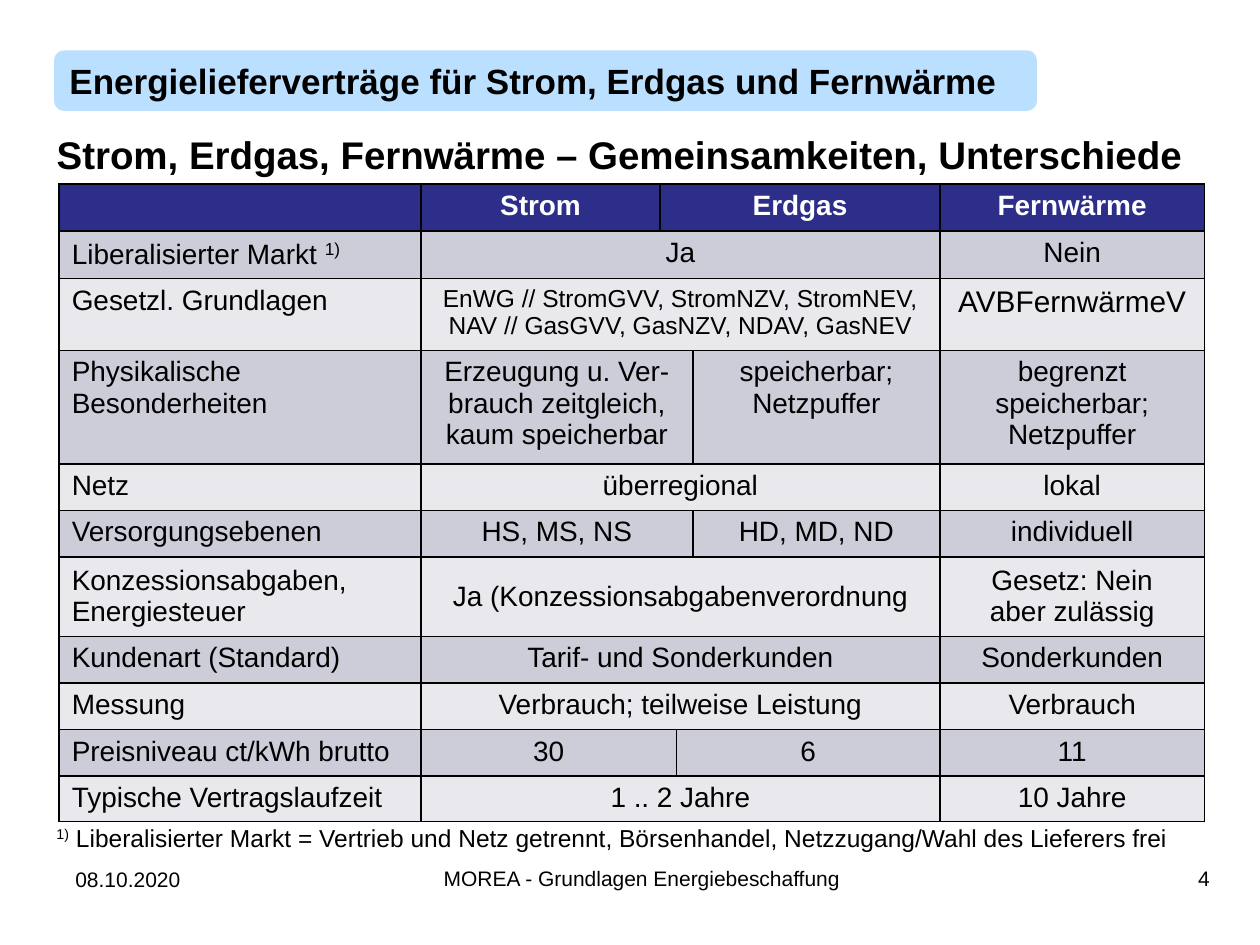
"""Build a slide comparing electricity, gas and district heating supply contracts."""
from lxml import etree
from pptx import Presentation
from pptx.dml.color import RGBColor
from pptx.enum.shapes import MSO_SHAPE
from pptx.enum.text import MSO_ANCHOR, PP_ALIGN
from pptx.oxml import parse_xml
from pptx.oxml.ns import nsdecls, qn
from pptx.util import Inches, Pt

LEFT, CENTER, RIGHT = PP_ALIGN.LEFT, PP_ALIGN.CENTER, PP_ALIGN.RIGHT
TOP, MIDDLE = MSO_ANCHOR.TOP, MSO_ANCHOR.MIDDLE
ROUNDED = MSO_SHAPE.ROUNDED_RECTANGLE
BLACK = RGBColor(0x00, 0x00, 0x00)
WHITE = RGBColor(0xFF, 0xFF, 0xFF)
SKY = RGBColor(0x05, 0x8E, 0xFF)
NAVY = RGBColor(0x2D, 0x2D, 0x8A)
GREY = RGBColor(0xCD, 0xCD, 0xDA)
PALE = RGBColor(0xE8, 0xE8, 0xED)


def add_span(para, text, size, color=BLACK, bold=False, raised=False):
    span = para.add_run()
    span.text = text
    span.font.name = "Arial"
    span.font.size = Pt(size)
    span.font.bold = bold
    span.font.color.rgb = color
    if raised:
        span._r.get_or_add_rPr().set("baseline", "30000")


def add_text_box(page, left, top, width, height, align=LEFT):
    box = page.shapes.add_textbox(Inches(left), Inches(top), Inches(width), Inches(height))
    box.text_frame.word_wrap = True
    para = box.text_frame.paragraphs[0]
    para.alignment = align
    return para


deck = Presentation()
deck.slide_width, deck.slide_height = Inches(10), Inches(7.5)
page = deck.slides.add_slide(deck.slide_layouts[5])

banner = page.shapes.add_shape(ROUNDED, Inches(0.43), Inches(0.4), Inches(7.8), Inches(0.48))
banner.shadow.inherit = False
banner.fill.solid()
banner.fill.fore_color.rgb = SKY
banner_color = banner._element.spPr.find(qn("a:solidFill"))[0]
etree.SubElement(banner_color, qn("a:alpha")).set("val", "27000")
banner.line.fill.background()
banner.text_frame.vertical_anchor = MIDDLE
banner_para = banner.text_frame.paragraphs[0]
banner_para.alignment = LEFT
add_span(banner_para, "Energielieferverträge für Strom, Erdgas und Fernwärme", 20, bold=True)

title = page.shapes.title
title.left, title.top = Inches(0.35), Inches(0.99)
title.width, title.height = Inches(9.34), Inches(0.47)
title.text_frame.vertical_anchor = TOP
title.text_frame.word_wrap = True
title_para = title.text_frame.paragraphs[0]
title_para.alignment = LEFT
add_span(title_para, "Strom, Erdgas, Fernwärme – Gemeinsamkeiten, Unterschiede", 22, bold=True)

column_widths = [2.87, 1.9, 0.13, 0.13, 1.96, 2.1]
rows = [
    (0.36, [(0, 1, ""), (1, 1, "Strom"), (2, 3, "Erdgas"), (5, 1, "Fernwärme")]),
    (0.38, [(0, 1, "Liberalisierter Markt "), (1, 4, "Ja"), (5, 1, "Nein")]),
    (0.57, [(0, 1, "Gesetzl. Grundlagen"),
            (1, 4, "EnWG // StromGVV, StromNZV, StromNEV, NAV // GasGVV, GasNZV, NDAV, GasNEV"),
            (5, 1, "AVBFernwärmeV")]),
    (0.9, [(0, 1, "Physikalische Besonderheiten"),
           (1, 3, "Erzeugung u. Ver-brauch zeitgleich, kaum speicherbar"),
           (4, 1, "speicherbar;\nNetzpuffer"),
           (5, 1, "begrenzt speicherbar;\nNetzpuffer")]),
    (0.37, [(0, 1, "Netz"), (1, 4, "überregional"), (5, 1, "lokal")]),
    (0.37, [(0, 1, "Versorgungsebenen"), (1, 3, "HS, MS, NS"),
            (4, 1, "HD, MD, ND"), (5, 1, "individuell")]),
    (0.63, [(0, 1, "Konzessionsabgaben, Energiesteuer"),
            (1, 4, "Ja (Konzessionsabgabenverordnung"),
            (5, 1, "Gesetz: Nein\naber zulässig")]),
    (0.37, [(0, 1, "Kundenart (Standard)"), (1, 4, "Tarif- und Sonderkunden"),
            (5, 1, "Sonderkunden")]),
    (0.37, [(0, 1, "Messung"), (1, 4, "Verbrauch; teilweise Leistung"), (5, 1, "Verbrauch")]),
    (0.37, [(0, 1, "Preisniveau ct/kWh brutto"), (1, 2, "30"), (3, 2, "6"), (5, 1, "11")]),
    (0.36, [(0, 1, "Typische Vertragslaufzeit"), (1, 4, "1 .. 2 Jahre"), (5, 1, "10 Jahre")]),
]
special_sizes = {(2, 1): 14, (2, 5): 17}
centered_row = 6

table = page.shapes.add_table(
    len(rows), len(column_widths), Inches(0.47), Inches(1.46),
    Inches(sum(column_widths)), Inches(sum(height for height, entries in rows)),
).table
table.horz_banding = False
for column, width in zip(table.columns, column_widths):
    column.width = Inches(width)

for row_index, (height, entries) in enumerate(rows):
    table.rows[row_index].height = Inches(height)
    header = row_index == 0
    row_fill = NAVY if header else GREY if row_index % 2 else PALE
    for cell in table.rows[row_index].cells:
        end_mark = etree.SubElement(cell.text_frame.paragraphs[0]._p, qn("a:endParaRPr"))
        end_mark.set("sz", "1600")
        properties = cell._tc.get_or_add_tcPr()
        for side in ("lnL", "lnR", "lnT", "lnB"):
            properties.append(parse_xml(
                f'<a:{side} {nsdecls("a")} w="12700"><a:solidFill>'
                f'<a:srgbClr val="{BLACK}"/></a:solidFill></a:{side}>'))
        cell.fill.solid()
        cell.fill.fore_color.rgb = row_fill
    for start, count, text in entries:
        cell = table.cell(row_index, start)
        if count > 1:
            cell.merge(table.cell(row_index, start + count - 1))
        cell.vertical_anchor = MIDDLE if row_index == centered_row else TOP
        frame = cell.text_frame
        for line_index, line in enumerate(text.split("\n")):
            para = frame.add_paragraph() if line_index else frame.paragraphs[0]
            para.alignment = CENTER if start else LEFT
            if line:
                add_span(para, line, special_sizes.get((row_index, start), 16),
                         WHITE if header else BLACK, header)

add_span(table.cell(1, 0).text_frame.paragraphs[0], "1)", 17, raised=True)

footnote = add_text_box(page, 0.35, 6.48, 9.34, 0.34)
add_span(footnote, "1)", 14, raised=True)
add_span(footnote, " Liberalisierter Markt = Vertrieb und Netz getrennt, Börsenhandel, "
         "Netzzugang/Wahl des Lieferers frei", 14)

footers = [
    ("08.10.2020", 0.5, 6.83, 1.2, LEFT),
    ("MOREA - Grundlagen Energiebeschaffung", 1.75, 6.82, 6.69, CENTER),
    ("4", 8.86, 6.82, 0.84, RIGHT),
]
for text, left, top, width, align in footers:
    add_span(add_text_box(page, left, top, width, 0.52, align), text, 12)

deck.save("out.pptx")
